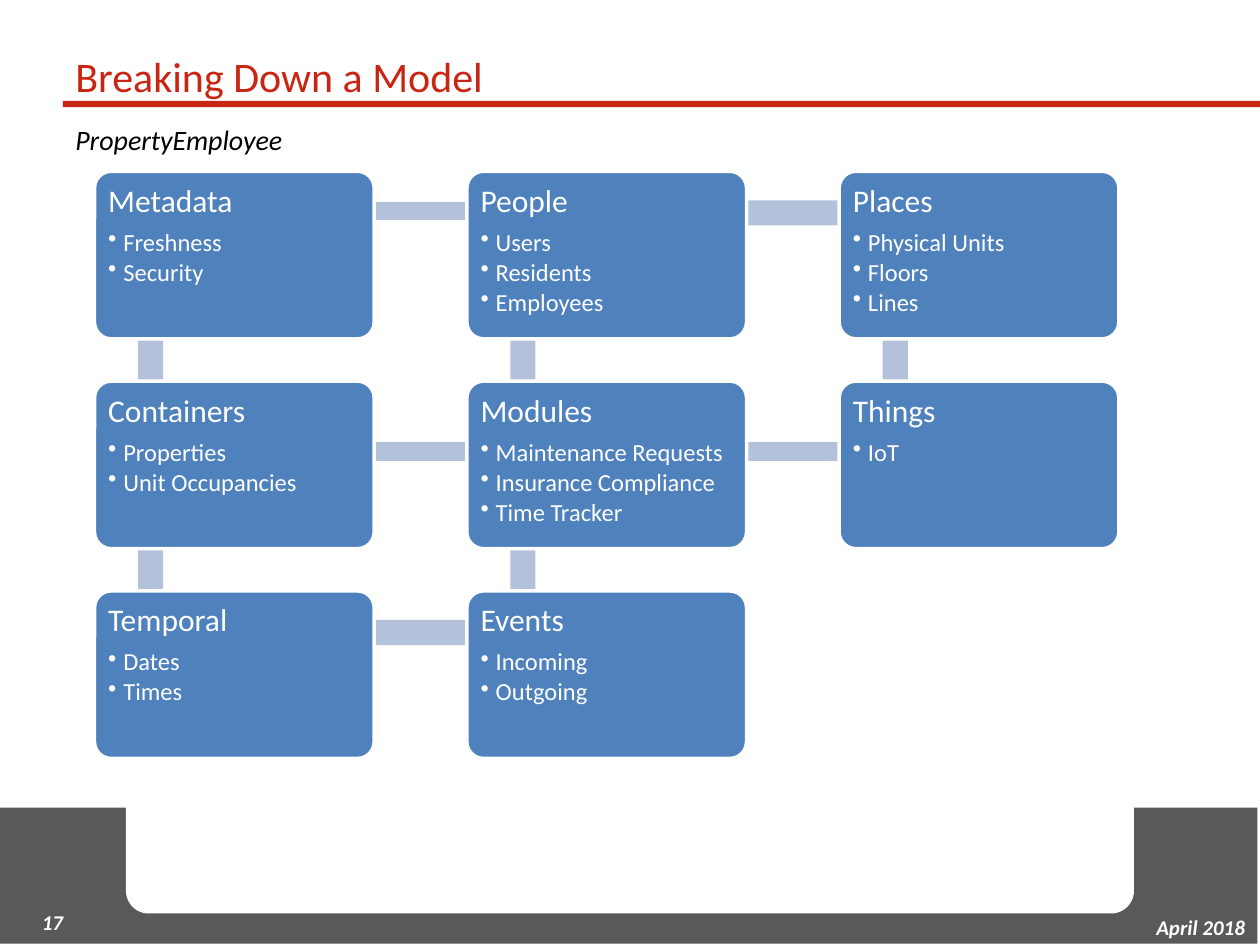
from typing import Any, NamedTuple

from lxml import etree
from pptx import Presentation
from pptx.dml.color import RGBColor
from pptx.enum.shapes import MSO_SHAPE
from pptx.enum.text import MSO_ANCHOR, PP_ALIGN
from pptx.oxml.ns import qn
from pptx.util import Inches, Pt

RECT = MSO_SHAPE.RECTANGLE
ROUNDED = MSO_SHAPE.ROUNDED_RECTANGLE
MINUS = MSO_SHAPE.MATH_MINUS
TOP, BOTTOM = MSO_ANCHOR.TOP, MSO_ANCHOR.BOTTOM
LEFT, RIGHT = PP_ALIGN.LEFT, PP_ALIGN.RIGHT

RED = RGBColor(0xC9, 0x25, 0x13)
GREY = RGBColor(0x59, 0x59, 0x59)
BLUE = RGBColor(0x4F, 0x81, 0xBD)
PALE_BLUE = RGBColor(0xB3, 0xC1, 0xDB)
WHITE = RGBColor(0xFF, 0xFF, 0xFF)
BLACK = RGBColor(0, 0, 0)

SLIDE_WIDTH, SLIDE_HEIGHT = Inches(10), Inches(7.5)
COLUMNS, ROWS = 100, 75
FIRST_COLUMN, FIRST_ROW = 7.5, 13.6
COLUMN_STEP, ROW_STEP = 29.55, 16.65
TILE_COLUMNS, TILE_ROWS = 22.2, 13.3


class Area(NamedTuple):
    column: float
    row: float
    columns: float
    rows: float


class Tile(NamedTuple):
    column: int
    row: int
    heading: str
    items: tuple[str, ...]


class Link(NamedTuple):
    column: int
    row: int
    offset: Area
    kind: int = RECT
    rotation: int = 0


class Caption(NamedTuple):
    text: str
    area: Area
    font: dict[str, Any]
    color: RGBColor
    margins: tuple[float, float]
    align: int = LEFT
    anchor: int = TOP


DOWN = Area(-3.8, 10.6, 16.5, 2)
ACROSS = Area(4.6, 2.3, 29.4, 2)
MINUS_TOP = Area(19.9, 0, 13.4, 6.3)
MINUS_MIDDLE = Area(19.9, 2.45, 13.4, 6.3)

LINKS = (
    Link(1, 1, MINUS_MIDDLE, MINUS),
    Link(0, 1, MINUS_MIDDLE, MINUS),
    Link(0, 0, MINUS_TOP, MINUS),
    Link(0, 0, DOWN, rotation=90),
    Link(0, 1, DOWN, rotation=90),
    Link(0, 2, ACROSS),
    Link(1, 1, DOWN, rotation=270),
    Link(1, 0, DOWN, rotation=270),
    Link(1, 0, ACROSS),
    Link(2, 0, DOWN, rotation=90),
)
TILES = (
    Tile(0, 0, "Metadata", ("Freshness", "Security")),
    Tile(0, 1, "Containers", ("Properties", "Unit Occupancies")),
    Tile(0, 2, "Temporal", ("Dates", "Times")),
    Tile(1, 2, "Events", ("Incoming", "Outgoing")),
    Tile(1, 1, "Modules", ("Maintenance Requests", "Insurance Compliance", "Time Tracker")),
    Tile(1, 0, "People", ("Users", "Residents", "Employees")),
    Tile(2, 0, "Places", ("Physical Units", "Floors", "Lines")),
    Tile(2, 1, "Things", ("IoT",)),
)

FOOTER_FONT = {"name": "Calibri", "size": Pt(12), "bold": True, "italic": True}
TITLE_FONT = {"name": "Calibri", "size": Pt(24)}
SUBTITLE_FONT = {"name": "Calibri", "size": Pt(16), "italic": True}
HEADING_FONT = {"name": "Calibri", "size": Pt(18)}
ITEM_FONT = {"name": "Calibri", "size": Pt(14)}
HEADING_SPACING = {"alignment": LEFT, "line_spacing": 0.9, "space_after": Pt(6.3)}
ITEM_SPACING = {"alignment": LEFT, "line_spacing": 0.9, "space_after": Pt(2.1), "level": 1}

CAPTIONS = (
    Caption("April 2018", Area(76, 72.1, 23.8, 3), FOOTER_FONT, WHITE, (1, 0.5), RIGHT),
    Caption("Breaking Down a Model", Area(5, 3.3, 88.1, 4.2), TITLE_FONT, RED, (1, 0.7)),
    Caption("PropertyEmployee", Area(5, 9.2, 85, 2.7), SUBTITLE_FONT, BLACK, (1, 0.5)),
    Caption("17", Area(0.5, 70.2, 4.5, 4), FOOTER_FONT, WHITE, (0, 0), RIGHT, BOTTOM),
)


def across(columns: float) -> int:
    return round(SLIDE_WIDTH * columns / COLUMNS)


def down(rows: float) -> int:
    return round(SLIDE_HEIGHT * rows / ROWS)


def place(area: Area) -> tuple[int, int, int, int]:
    return across(area.column), down(area.row), across(area.columns), down(area.rows)


def on_grid(column: int, row: int, offset: Area) -> Area:
    return offset._replace(
        column=FIRST_COLUMN + column * COLUMN_STEP + offset.column,
        row=FIRST_ROW + row * ROW_STEP + offset.row,
    )


def apply(target: Any, formats: dict[str, Any]) -> None:
    for attribute, value in formats.items():
        setattr(target, attribute, value)


def set_margins(frame: Any, side: float, edge: float) -> None:
    apply(frame, {
        "margin_left": across(side), "margin_right": across(side),
        "margin_top": down(edge), "margin_bottom": down(edge),
    })


def draw_block(slide: Any, kind: int, area: Area, color: RGBColor) -> Any:
    block = slide.shapes.add_shape(kind, *place(area))
    block.shadow.inherit = False
    block.fill.solid()
    block.fill.fore_color.rgb = color
    block.line.fill.background()
    return block


def write(paragraph: Any, text: str, font: dict[str, Any], color: RGBColor) -> None:
    paragraph.text = text
    apply(paragraph.runs[0].font, font)
    paragraph.runs[0].font.color.rgb = color


def add_bullet(paragraph: Any) -> None:
    properties = paragraph._p.get_or_add_pPr()
    properties.set("marL", str(Inches(0.12)))
    properties.set("indent", str(-Inches(0.12)))
    etree.SubElement(properties, qn("a:buChar")).set("char", "•")


def draw_caption(slide: Any, caption: Caption) -> None:
    frame = slide.shapes.add_textbox(*place(caption.area)).text_frame
    apply(frame, {"word_wrap": True, "vertical_anchor": caption.anchor})
    set_margins(frame, *caption.margins)
    frame.paragraphs[0].alignment = caption.align
    write(frame.paragraphs[0], caption.text, caption.font, caption.color)


def draw_link(slide: Any, link: Link) -> None:
    bar = draw_block(slide, link.kind, on_grid(link.column, link.row, link.offset), PALE_BLUE)
    bar.rotation = link.rotation


def draw_tile(slide: Any, tile: Tile) -> None:
    area = on_grid(tile.column, tile.row, Area(0, 0, TILE_COLUMNS, TILE_ROWS))
    card = draw_block(slide, ROUNDED, area, BLUE)
    card.adjustments[0] = 0.1
    card.line.color.rgb = WHITE
    card.line.width = Pt(2)
    frame = card.text_frame
    apply(frame, {"word_wrap": True, "vertical_anchor": TOP})
    set_margins(frame, 0.7, 0.7)
    heading = frame.paragraphs[0]
    apply(heading, HEADING_SPACING)
    write(heading, tile.heading, HEADING_FONT, WHITE)
    for item in tile.items:
        entry = frame.add_paragraph()
        add_bullet(entry)
        apply(entry, ITEM_SPACING)
        write(entry, item, ITEM_FONT, WHITE)


def main() -> None:
    deck = Presentation()
    apply(deck, {"slide_width": SLIDE_WIDTH, "slide_height": SLIDE_HEIGHT})
    slide = deck.slides.add_slide(deck.slide_layouts[6])
    draw_block(slide, RECT, Area(-0.2, 64.1, 100, 10.8), GREY)
    draw_block(slide, ROUNDED, Area(10, 61.7, 80, 10.8), WHITE)
    draw_block(slide, RECT, Area(5, 8, 95, 0.5), RED)
    for caption in CAPTIONS:
        draw_caption(slide, caption)
    for link in LINKS:
        draw_link(slide, link)
    for tile in TILES:
        draw_tile(slide, tile)
    deck.save("out.pptx")


if __name__ == "__main__":
    main()
